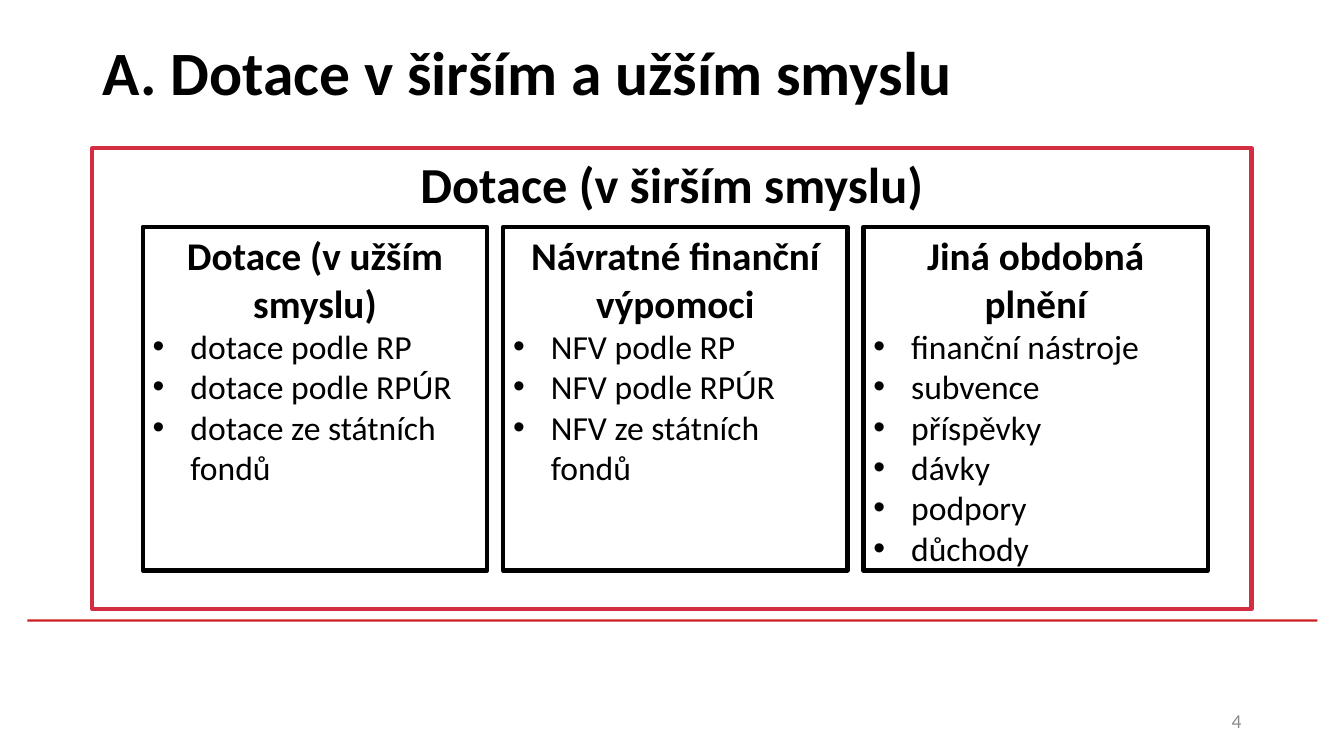
from dataclasses import dataclass

from lxml import etree
from pptx import Presentation
from pptx.dml.color import RGBColor
from pptx.enum.shapes import MSO_SHAPE
from pptx.enum.text import MSO_ANCHOR, PP_ALIGN
from pptx.oxml.ns import qn
from pptx.util import Pt

RECTANGLE = MSO_SHAPE.RECTANGLE
TOP, MIDDLE = MSO_ANCHOR.TOP, MSO_ANCHOR.MIDDLE
LEFT, CENTER, RIGHT = PP_ALIGN.LEFT, PP_ALIGN.CENTER, PP_ALIGN.RIGHT

FONT = "Calibri"
BLACK, WHITE, GREY = "000000", "FFFFFF", "8C8C8C"
FRAME_RED, RULE_RED = "D22D40", "CD1F21"

MARGIN, CONTENT_WIDTH = 66, 828
CARD_LEFT, CARD_TOP, CARD_PITCH = 102, 162, 257.4
CARD_WIDTH, CARD_HEIGHT = 246, 245.5
BULLET_INDENT = 27


@dataclass
class Area:
    left: float
    top: float
    width: float
    height: float

    def lengths(self):
        return Pt(self.left), Pt(self.top), Pt(self.width), Pt(self.height)


@dataclass
class Card:
    heading: str
    items: list[str]


CARDS = [
    Card("Dotace (v užším smyslu)",
         ["dotace podle RP", "dotace podle RPÚR", "dotace ze státních fondů"]),
    Card("Návratné finanční výpomoci",
         ["NFV podle RP", "NFV podle RPÚR", "NFV ze státních fondů"]),
    Card("Jiná obdobná plnění",
         ["finanční nástroje", "subvence", "příspěvky", "dávky", "podpory", "důchody"]),
]


def color(value: str) -> RGBColor:
    return RGBColor.from_string(value)


def add_bullet(para) -> None:
    properties = para._p.get_or_add_pPr()
    properties.set("marL", str(Pt(BULLET_INDENT)))
    properties.set("indent", str(-Pt(BULLET_INDENT)))
    etree.SubElement(properties, qn("a:buFont")).set("typeface", "Arial")
    etree.SubElement(properties, qn("a:buChar")).set("char", "•")


def write(para, text: str, *, size: float, bold: bool = False, fill: str = BLACK,
          align=LEFT, bullet: bool = False) -> None:
    if bullet:
        add_bullet(para)
    para.alignment = align
    span = para.add_run()
    span.text = text
    span.font.name = FONT
    span.font.size = Pt(size)
    span.font.bold = bold
    span.font.color.rgb = color(fill)


def add_rectangle(page, area: Area, fill: str, line: str | None = None):
    box = page.shapes.add_shape(RECTANGLE, *area.lengths())
    box.shadow.inherit = False
    box.fill.solid()
    box.fill.fore_color.rgb = color(fill)
    if line:
        box.line.color.rgb = color(line)
        box.line.width = Pt(3)
    else:
        box.line.fill.background()
    box.text_frame.word_wrap = True
    box.text_frame.vertical_anchor = TOP
    return box


def add_title(page, text: str) -> None:
    title = page.shapes.title
    title.left, title.top, title.width, title.height = Area(
        MARGIN, 1.5, CONTENT_WIDTH, 104.5).lengths()
    title.text_frame.vertical_anchor = MIDDLE
    para = title.text_frame.paragraphs[0]
    para.line_spacing = 0.9
    write(para, text, size=44, bold=True)


def add_page_number(page, number: str) -> None:
    box = page.shapes.add_textbox(*Area(678, 500.5, 216, 28.8).lengths())
    box.text_frame.word_wrap = True
    box.text_frame.vertical_anchor = MIDDLE
    write(box.text_frame.paragraphs[0], number, size=14, fill=GREY, align=RIGHT)


def add_card(page, card: Card, column: int) -> None:
    area = Area(CARD_LEFT + column * CARD_PITCH, CARD_TOP, CARD_WIDTH, CARD_HEIGHT)
    frame = add_rectangle(page, area, WHITE, BLACK).text_frame
    write(frame.paragraphs[0], card.heading, size=28, bold=True, align=CENTER)
    for item in card.items:
        write(frame.add_paragraph(), item, size=24, bullet=True)


def main() -> None:
    deck = Presentation()
    deck.slide_width, deck.slide_height = Pt(960), Pt(540)
    page = deck.slides.add_slide(deck.slide_layouts.get_by_name("Title Only"))

    add_rectangle(page, Area(19.5, 442.5, 921.5, 1.5), RULE_RED)
    add_title(page, "A. Dotace v širším a užším smyslu")
    add_page_number(page, "4")

    outer = add_rectangle(page, Area(MARGIN, 106, CONTENT_WIDTH, 329), WHITE, FRAME_RED)
    write(outer.text_frame.paragraphs[0], "Dotace (v širším smyslu)",
          size=36, bold=True, align=CENTER)
    for column, card in enumerate(CARDS):
        add_card(page, card, column)

    deck.save("out.pptx")


if __name__ == "__main__":
    main()
